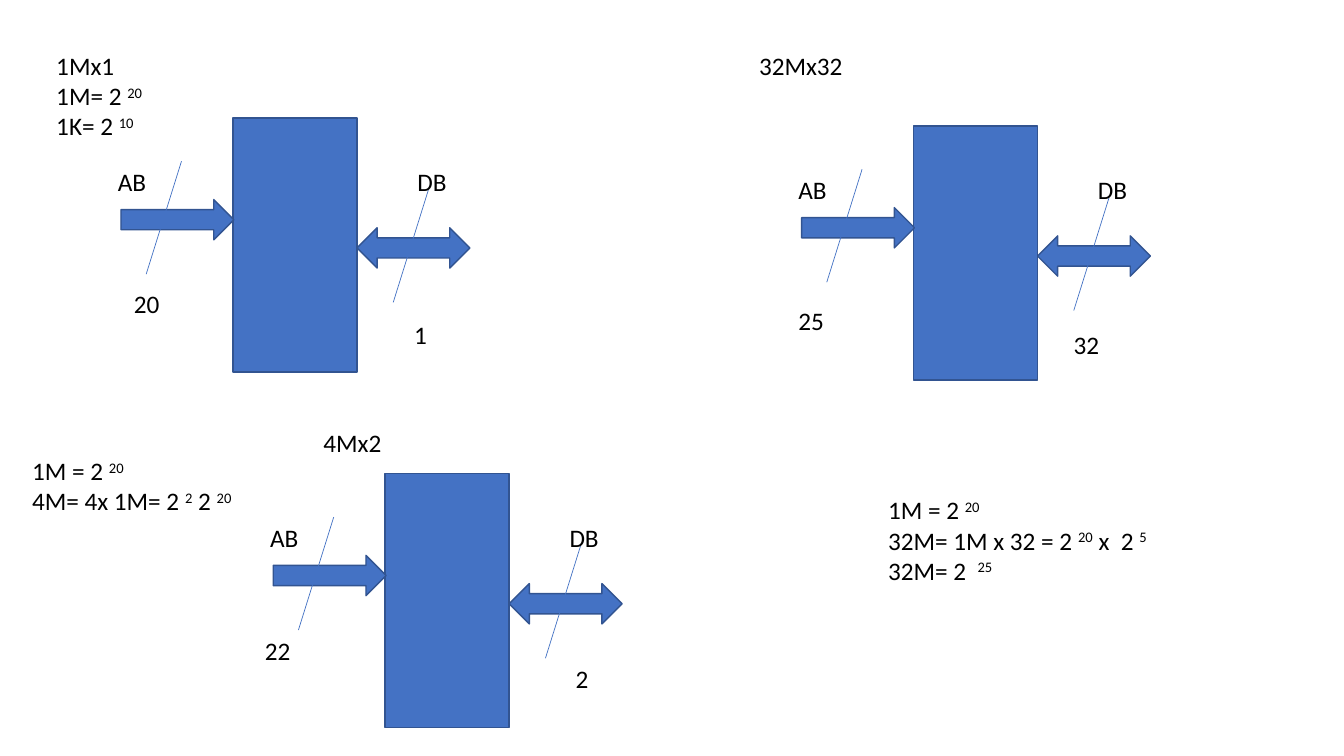
from lxml.etree import SubElement
from pptx import Presentation
from pptx.dml.color import RGBColor
from pptx.enum.shapes import MSO_CONNECTOR, MSO_SHAPE
from pptx.enum.text import MSO_AUTO_SIZE
from pptx.oxml.ns import qn
from pptx.util import Inches, Pt

# Content: text between carets is raised; positions are in inches
MEMORIES = [
    {"chip": (2.31, 1.17), "notes": [
        (0.46, 0.45, 1.53, ["1Mx1", "1M= 2 ^20^", "1K= 2 ^10^"]),
        (1.23, 2.81, 0.71, ["20"]),
        (4.01, 3.12, 0.46, ["1"])]},
    {"chip": (9.06, 1.25), "notes": [
        (7.43, 0.45, 1.53, ["32Mx32"]),
        (7.82, 2.98, 0.72, ["25"]),
        (10.55, 3.22, 0.58, ["32"]),
        (8.71, 4.86, 2.89, ["1M = 2 ^20^", "32M= 1M x 32 = 2 ^20^ x  2 ^5^",
                            "32M= 2  ^25^"])]},
    {"chip": (3.82, 4.70), "notes": [
        (3.11, 4.19, 1.53, ["4Mx2"]),
        (2.53, 6.25, 0.63, ["22"]),
        (5.61, 6.53, 0.35, ["2"]),
        (0.22, 4.47, 2.89, ["1M = 2 ^20^", "4M= 4x 1M= 2 ^2^ 2 ^20^"])]},
]

COLORS = {"fill": "4472C4", "outline": "325491", "text": "000000"}
FONT, FONT_SIZE = "Calibri", 18
LINE_HEIGHT, TEXT_PADDING = 0.3, 0.1

# Parts of one memory, measured from the chip's top left corner
CHIP_WIDTH, CHIP_HEIGHT = 1.23, 2.52
BUS_WIDTH, BUS_HEIGHT = 1.12, 0.4
BLOCKS = [
    (MSO_SHAPE.RECTANGLE, 0, 0, CHIP_WIDTH, CHIP_HEIGHT),
    (MSO_SHAPE.RIGHT_ARROW, 0.01 - BUS_WIDTH, 0.81, BUS_WIDTH, BUS_HEIGHT),
    (MSO_SHAPE.LEFT_RIGHT_ARROW, CHIP_WIDTH, 1.09, BUS_WIDTH, BUS_HEIGHT),
]
SLASHES = [(1.94, 0.71), (-0.51, 0.43)]
SLASH_RUN, SLASH_DROP = -0.35, 1.12
BUS_LABELS = [(-1.24, 0.43, 0.57, ["AB"]), (1.73, 0.43, 0.81, ["DB"])]


def color(name):
    return RGBColor.from_string(COLORS[name])


def add_text(shapes, left, top, width, lines):
    height = len(lines) * LINE_HEIGHT + TEXT_PADDING
    box = shapes.add_textbox(*map(Inches, (left, top, width, height)))
    frame = box.text_frame
    frame.word_wrap = True
    frame.auto_size = MSO_AUTO_SIZE.SHAPE_TO_FIT_TEXT
    for i, line in enumerate(lines):
        paragraph = frame.add_paragraph() if i else frame.paragraphs[0]
        paragraph.font.name = FONT
        paragraph.font.size = Pt(FONT_SIZE)
        paragraph.font.color.rgb = color("text")
        for j, part in enumerate(line.split("^")):
            if part:
                run = paragraph.add_run()
                run.text = part
                if j % 2:
                    run._r.get_or_add_rPr().set("baseline", "30000")


def add_block(shapes, kind, left, top, width, height):
    block = shapes.add_shape(kind, *map(Inches, (left, top, width, height)))
    block.shadow.inherit = False
    block.fill.solid()
    block.fill.fore_color.rgb = color("fill")
    block.line.color.rgb = color("outline")
    block.line.width = Pt(1)


def add_slash(shapes, x, y):
    ends = (x, y, x + SLASH_RUN, y + SLASH_DROP)
    slash = shapes.add_connector(MSO_CONNECTOR.STRAIGHT, *map(Inches, ends))
    slash.line.color.rgb = color("fill")
    slash.line.width = Pt(0.5)
    SubElement(slash._element.spPr, qn("a:effectLst"))


presentation = Presentation()
presentation.slide_width, presentation.slide_height = Inches(13.33), Inches(7.5)
slide = presentation.slides.add_slide(presentation.slide_layouts[6])

for memory in MEMORIES:
    # Chip with its address and data buses
    x, y = memory["chip"]
    diagram = slide.shapes.add_group_shape().shapes
    for kind, dx, dy, width, height in BLOCKS:
        add_block(diagram, kind, x + dx, y + dy, width, height)
    for dx, dy in SLASHES:
        add_slash(diagram, x + dx, y + dy)
    for dx, dy, width, lines in BUS_LABELS:
        add_text(diagram, x + dx, y + dy, width, lines)

    # Size, bus widths and calculation
    for note in memory["notes"]:
        add_text(slide.shapes, *note)

presentation.save("out.pptx")
